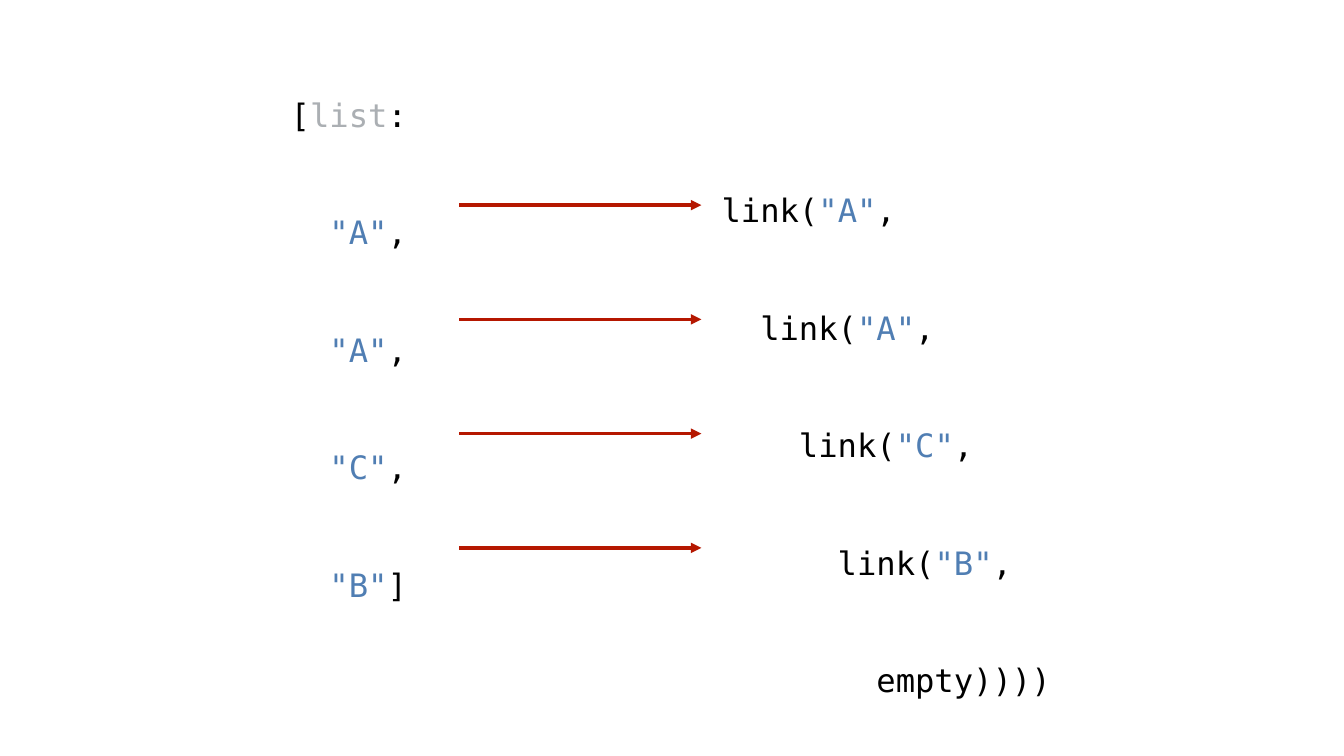
from typing import NamedTuple

from lxml import etree
from pptx import Presentation
from pptx.dml.color import RGBColor
from pptx.enum.shapes import MSO_CONNECTOR
from pptx.enum.text import MSO_ANCHOR, MSO_AUTO_SIZE
from pptx.oxml.ns import qn
from pptx.util import Inches, Pt

STRAIGHT = MSO_CONNECTOR.STRAIGHT
TOP = MSO_ANCHOR.TOP
NO_AUTOSIZE = MSO_AUTO_SIZE.NONE

COLOURS = {"code": "000000", "keyword": "ABAFB3", "string": "507EB3", "arrow": "B51700"}
FONT = "DejaVu Sans Mono"
FONT_SIZE = 46
LINE_SPACING = 1.5
LINE_GAP = 85

BOX_TOP, BOX_HEIGHT, INSET = 1.4, 12.2, 0.1
ARROW_LEFT, ARROW_RIGHT = 9.11, 13.92
ARROW_TOP, ARROW_STEP = 4.07, 2.267
ITEMS = ["A", "A", "C", "B"]


class Span(NamedTuple):
    text: str
    colour: str = "code"


class CodeBlock(NamedTuple):
    left: float
    width: float
    top_inset: float
    lines: list[list[Span]]


def item_line(before: str, item: str, after: str) -> list[Span]:
    return [Span(before), Span(f'"{item}"', "string"), Span(after)]


def colour(name: str) -> RGBColor:
    return RGBColor.from_string(COLOURS[name])


def draw_code(page, block: CodeBlock) -> None:
    box = page.shapes.add_textbox(
        Inches(block.left), Inches(BOX_TOP), Inches(block.width), Inches(BOX_HEIGHT)
    )
    frame = box.text_frame
    frame.word_wrap = False
    frame.auto_size = NO_AUTOSIZE
    frame.vertical_anchor = TOP
    frame.margin_left = frame.margin_right = frame.margin_bottom = Inches(INSET)
    frame.margin_top = Inches(block.top_inset)
    for index, line in enumerate(block.lines):
        para = frame.add_paragraph() if index else frame.paragraphs[0]
        para.line_spacing = LINE_SPACING
        para.space_before = Pt(LINE_GAP if index else 0)
        for span in line:
            run = para.add_run()
            run.text = span.text
            run.font.name = FONT
            run.font.size = Pt(FONT_SIZE)
            run.font.color.rgb = colour(span.colour)


def draw_arrow(page, top: float) -> None:
    arrow = page.shapes.add_connector(
        STRAIGHT, Inches(ARROW_LEFT), Inches(top), Inches(ARROW_RIGHT), Inches(top)
    )
    arrow.line.color.rgb = colour("arrow")
    arrow.line.width = Pt(5)
    etree.SubElement(arrow.line._get_or_add_ln(), qn("a:tailEnd"), type="triangle")
    etree.SubElement(arrow._element.spPr, qn("a:effectLst"))


def main() -> None:
    deck = Presentation()
    deck.slide_width, deck.slide_height = Inches(26.67), Inches(15)
    page = deck.slides.add_slide(deck.slide_layouts[6])

    last = len(ITEMS) - 1
    list_lines = [[Span("["), Span("list", "keyword"), Span(":")]]
    list_lines += [
        item_line("  ", item, "]" if index == last else ",")
        for index, item in enumerate(ITEMS)
    ]
    # Each link nests one code indent deeper than the one before.
    link_lines = [
        item_line("  " * depth + "link(", item, ",") for depth, item in enumerate(ITEMS)
    ]
    link_lines.append([Span("  " * len(ITEMS) + "empty" + ")" * len(ITEMS))])

    draw_code(page, CodeBlock(5.67, 2.52, INSET, list_lines))
    draw_code(page, CodeBlock(14.22, 6.75, 2, link_lines))
    for index in range(len(ITEMS)):
        draw_arrow(page, ARROW_TOP + index * ARROW_STEP)

    deck.save("out.pptx")


if __name__ == "__main__":
    main()
